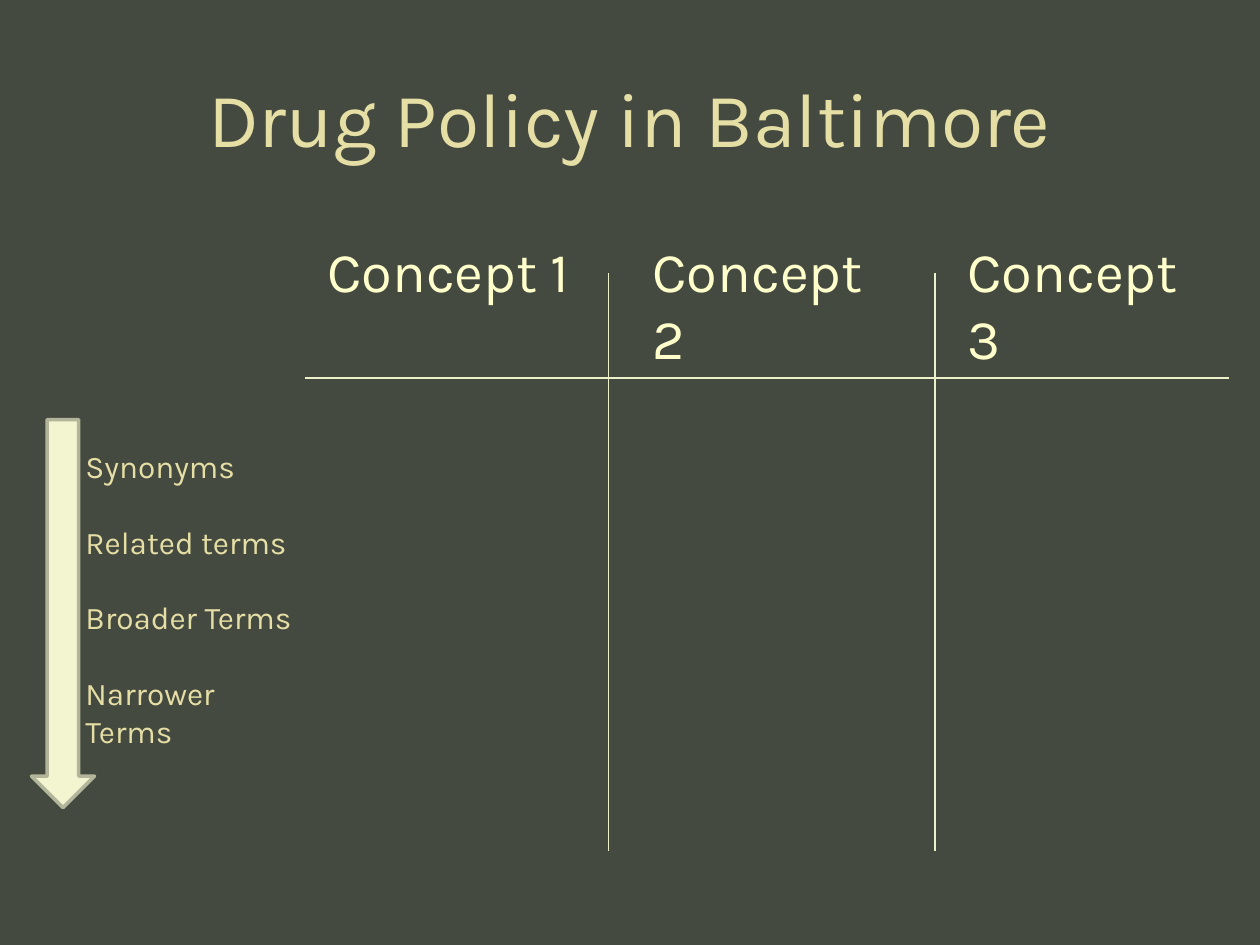
from lxml import etree
from pptx import Presentation
from pptx import util as u
from pptx.dml.color import RGBColor
from pptx.enum import shapes, text
from pptx.oxml import ns

PX = 9144
BACKGROUND = RGBColor(0x45, 0x4A, 0x40)
SAND = RGBColor(0xE5, 0xDE, 0xA5)
CREAM = RGBColor(0xFF, 0xFF, 0xCC)
RULE = RGBColor(0xED, 0xF1, 0xCB)
ARROW_FILL = RGBColor(0xF2, 0xF5, 0xD0)
ARROW_LINE = RGBColor(0xB3, 0xB5, 0x9A)


def px(*lengths):
    return [u.Emu(length * PX) for length in lengths]


def add_text(slide, box, lines, size, color, frame_format={}, paragraph_format={}):
    frame = slide.shapes.add_textbox(*px(*box)).text_frame
    for name, value in {"word_wrap": True, **frame_format}.items():
        setattr(frame, name, value)
    for index, line in enumerate(lines):
        paragraph = frame.add_paragraph() if index else frame.paragraphs[0]
        for name, value in paragraph_format.items():
            if index or name != "space_before":
                setattr(paragraph, name, value)
        run = paragraph.add_run()
        run.text = line
        for name, value in {"name": "Karla", "size": u.Pt(size)}.items():
            setattr(run.font, name, value)
        run.font.color.rgb = color


presentation = Presentation()
presentation.slide_width, presentation.slide_height = px(1000, 750)
slide = presentation.slides.add_slide(presentation.slide_layouts[6])
slide.background.fill.solid()
slide.background.fill.fore_color.rgb = BACKGROUND

add_text(slide, (50, 30, 900, 125), ["Drug Policy in Baltimore"], 44, SAND,
         {"vertical_anchor": text.MSO_ANCHOR.MIDDLE},
         {"alignment": text.PP_ALIGN.CENTER})

for number, left in enumerate((250, 508, 758), start=1):
    add_text(slide, (left, 183, 215, 64), [f"Concept {number}"], 32, CREAM)

for ends in ((483, 217, 483, 675), (742, 217, 742, 675), (242, 300, 975, 300)):
    connector = slide.shapes.add_connector(shapes.MSO_CONNECTOR.STRAIGHT, *px(*ends))
    connector.line.color.rgb = RULE
    connector.line.width = u.Pt(0.75)
    etree.SubElement(connector._element.spPr, ns.qn("a:effectLst"))

terms = ["Synonyms", "Related terms", "Broader Terms", "Narrower Terms"]
add_text(slide, (58, 350, 192, 222), terms, 18, SAND,
         paragraph_format={"space_before": u.Pt(21.6)})

arrow = slide.shapes.add_shape(shapes.MSO_SHAPE.DOWN_ARROW, *px(25, 333, 50, 308))
arrow.shadow.inherit = False
arrow.fill.solid()
arrow.fill.fore_color.rgb = ARROW_FILL
arrow.line.color.rgb = ARROW_LINE
arrow.line.width = u.Pt(2)

presentation.save("out.pptx")
